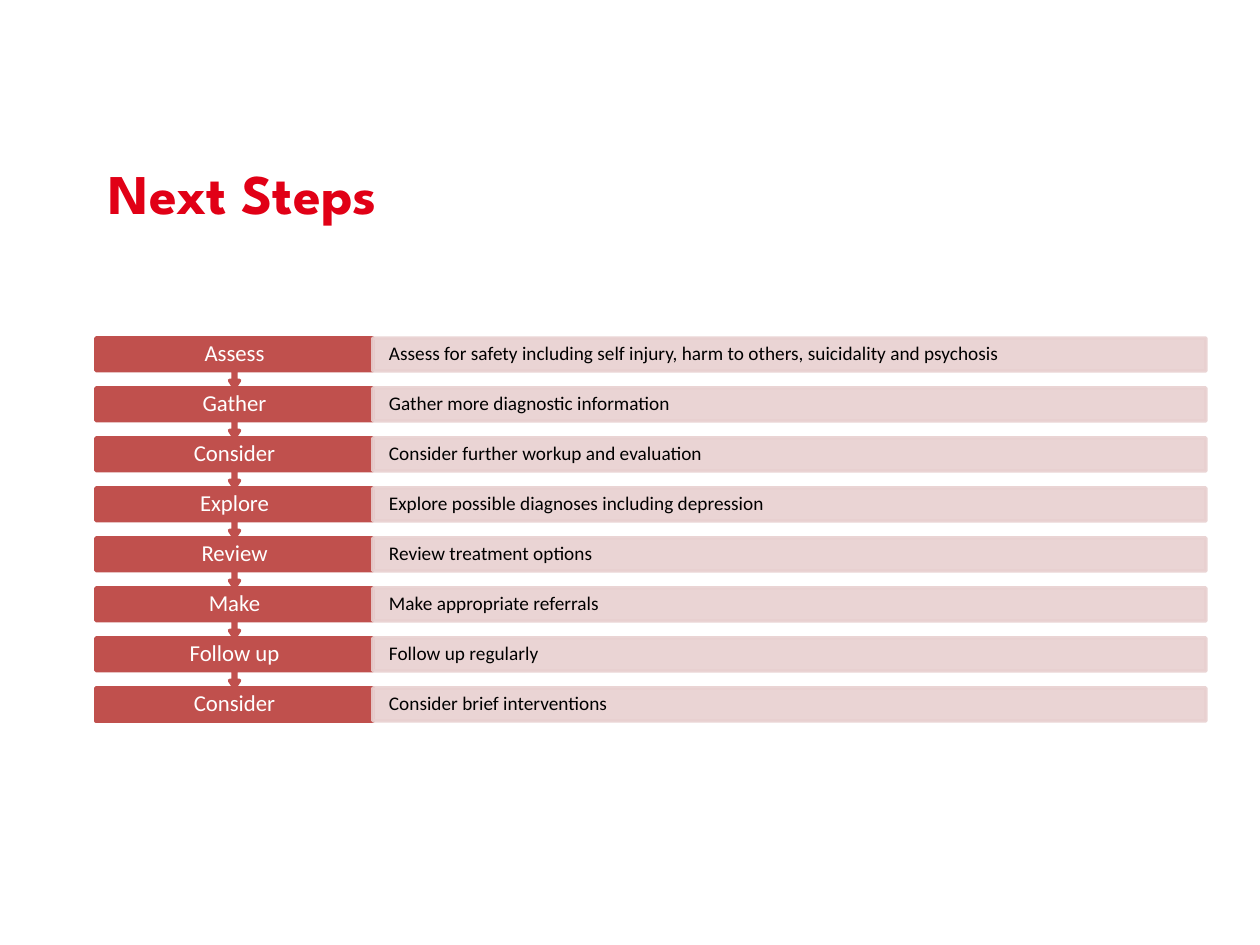
from lxml import etree
from pptx import Presentation
from pptx.dml.color import RGBColor
from pptx.enum.shapes import MSO_SHAPE
from pptx.enum.text import MSO_ANCHOR, PP_ALIGN
from pptx.oxml.ns import qn
from pptx.util import Pt

RECT, CALL = MSO_SHAPE.RECTANGLE, MSO_SHAPE.UP_ARROW_CALLOUT
TOP, MID = MSO_ANCHOR.TOP, MSO_ANCHOR.MIDDLE
LEFT, MIDST = PP_ALIGN.LEFT, PP_ALIGN.CENTER
PX = 914400 // 126

STEPS = [
    ("Assess", "Assess for safety including self injury, harm to others, "
               "suicidality and psychosis"),
    ("Gather", "Gather more diagnostic information"),
    ("Consider", "Consider further workup and evaluation"),
    ("Explore", "Explore possible diagnoses including depression"),
    ("Review", "Review treatment options"),
    ("Make", "Make appropriate referrals"),
    ("Follow up", "Follow up regularly"),
    ("Consider", "Consider brief interventions"),
]


def rgb(code):
    return RGBColor.from_string(code)


def box(*sides):
    return [side * PX for side in sides]


class Deck:
    RED, DARK, PALE = "E10016", "C0504D", "E8D0D0"
    WHITE, BLACK = "FFFFFF", "000000"
    HEAD, BODY = "League Spartan", "Calibri"

    def __init__(self):
        self.prs = Presentation()
        self.prs.slide_width, self.prs.slide_height = box(1260, 945)
        self.slide = self.prs.slides.add_slide(self.prs.slide_layouts[6])

    def shape(self, kind, place, color, alpha=100):
        item = self.slide.shapes.add_shape(kind, *box(*place))
        item.shadow.inherit = False
        item.line.width = Pt(2)
        for fill in (item.fill, item.line.fill):
            fill.solid()
            fill.fore_color.rgb = rgb(color)
        if alpha < 100:
            for tint in item._element.spPr.iter(qn("a:srgbClr")):
                etree.SubElement(tint, qn("a:alpha"), val=str(alpha * 1000))
        return item

    def arrow(self, place, color):
        item = self.shape(CALL, place, color)
        item.rotation = 180
        for i, part in enumerate((0.05, 0.1, 0.15, 0.65)):
            item.adjustments[i] = part

    def text(self, words, place, size, color, font=BODY, bold=False,
             align=LEFT, anchor=MID, pad=(13, 6), lead=0.9):
        frame = self.slide.shapes.add_textbox(*box(*place)).text_frame
        frame.word_wrap = True
        frame.vertical_anchor = anchor
        side, edge = box(*pad)
        frame.margin_left = frame.margin_right = side
        frame.margin_top = frame.margin_bottom = edge
        para = frame.paragraphs[0]
        para.alignment = align
        para.line_spacing = lead
        run = para.add_run()
        run.text = words
        run.font.name, run.font.size, run.font.bold = font, Pt(size), bold
        run.font.color.rgb = rgb(color)


def main():
    deck = Deck()

    # Title
    deck.text("Next Steps", (96, 152, 1492, 68), 32, deck.RED, deck.HEAD,
              bold=True, anchor=TOP, lead=1.0)

    # Steps, from the last row up so that each arrow lies over the next row
    left, top, pitch, high = 96, 338, 50, 33
    wide, span = 277, 833
    last = len(STEPS) - 1
    for i in range(last, -1, -1):
        name, task = STEPS[i]
        y = top + i * pitch
        label = (left, y, wide, high)
        bar = (left + wide, y, span, high)
        if i == last:
            deck.shape(RECT, label, deck.DARK)
        else:
            deck.arrow((left, y, wide, pitch), deck.DARK)
        deck.text(name, label, 13, deck.WHITE, align=MIDST, pad=(20, 13))
        deck.shape(RECT, bar, deck.PALE, alpha=90)
        deck.text(task, bar, 11, deck.BLACK, pad=(16, 19))

    deck.prs.save("out.pptx")


if __name__ == "__main__":
    main()
